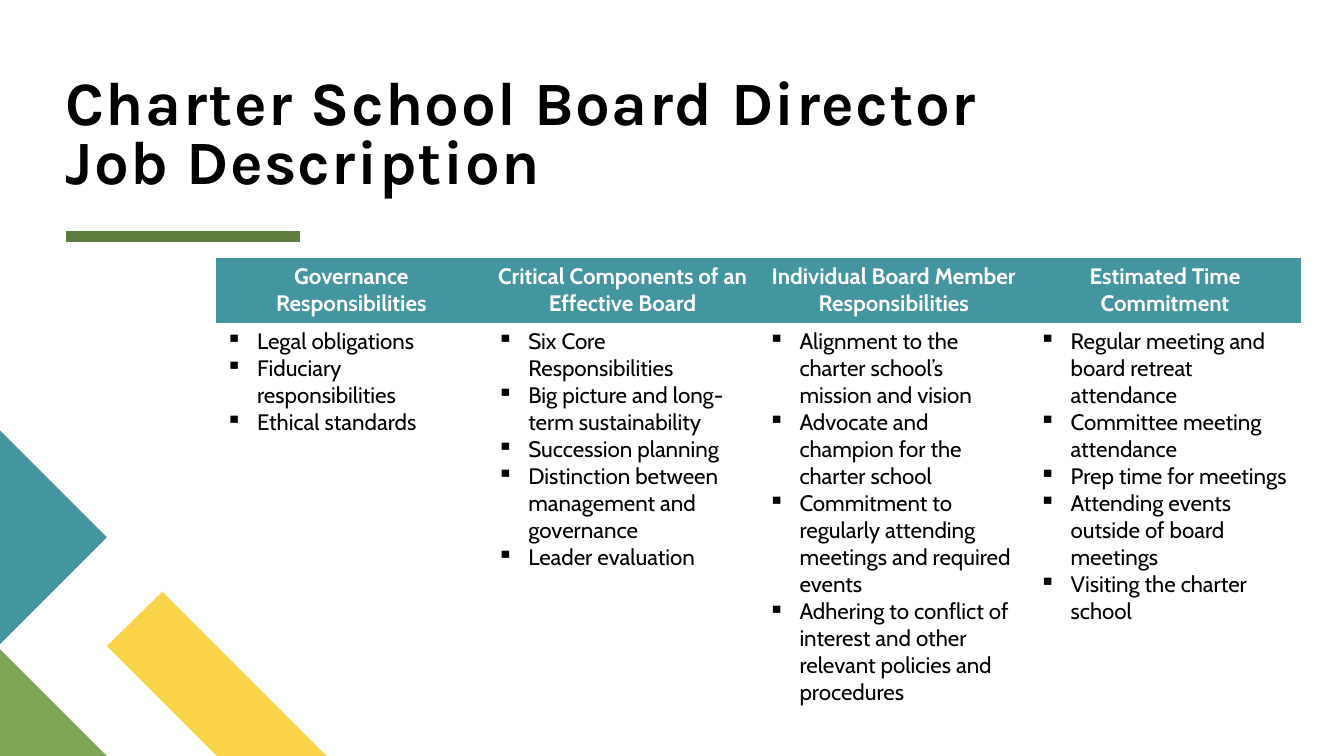
from lxml.etree import SubElement
from pptx import Presentation
from pptx.dml.color import RGBColor
from pptx.enum.text import MSO_ANCHOR, MSO_AUTO_SIZE, PP_ALIGN
from pptx.oxml.ns import qn
from pptx.util import Pt

PX = 9144
COLORS = {
    "black": "000000",
    "white": "FFFFFF",
    "teal": "4495A2",
    "gold": "F9D448",
    "green": "7CA655",
    "olive": "5D7D40",
}
CORNER = [
    ("gold", [(324, 750), (215, 750), (106, 641), (161, 587)]),
    ("green", [(106, 750), (0, 750), (0, 644)]),
    ("teal", [(0, 427), (106, 533), (0, 639)]),
]
DUTIES = {
    "Governance Responsibilities": [
        "Legal obligations",
        "Fiduciary responsibilities",
        "Ethical standards",
    ],
    "Critical Components of an Effective Board": [
        "Six Core Responsibilities",
        "Big picture and long-term sustainability",
        "Succession planning",
        "Distinction between management and governance",
        "Leader evaluation",
    ],
    "Individual Board Member Responsibilities": [
        "Alignment to the charter school’s mission and vision",
        "Advocate and champion for the charter school",
        "Commitment to regularly attending meetings and required events",
        "Adhering to conflict of interest and other relevant policies and procedures",
    ],
    "Estimated Time Commitment": [
        "Regular meeting and board retreat attendance",
        "Committee meeting attendance",
        "Prep time for meetings",
        "Attending events outside of board meetings",
        "Visiting the charter school",
    ],
}
PLAIN = "{2D5ABB26-0587-4C30-8999-92F81FD0307C}"


def color(name):
    return RGBColor.from_string(COLORS[name])


def assign(item, values):
    for name, value in values.items():
        setattr(item, name, value)


def style(font, face, size, bold, tint):
    assign(font, {"name": face, "size": Pt(size), "bold": bold})
    font.color.rgb = color(tint)


def add_title(slide, text):
    title = slide.shapes.title
    assign(title, {"left": 65 * PX, "top": 11 * PX, "width": 1189 * PX, "height": 184 * PX})
    frame = title.text_frame
    frame.text = text
    assign(frame, {
        "margin_left": 0, "margin_top": 0, "margin_right": 0, "margin_bottom": 0,
        "word_wrap": True, "auto_size": MSO_AUTO_SIZE.NONE,
        "vertical_anchor": MSO_ANCHOR.BOTTOM,
    })
    para = frame.paragraphs[0]
    assign(para, {"alignment": PP_ALIGN.LEFT, "line_spacing": 0.8})
    for run in para.runs:
        style(run.font, "Karla", 44, True, "black")
        run.font._element.set("spc", "100")


def add_rule(slide, left, right, top):
    rule = slide.shapes.add_connector(1, left * PX, top * PX, right * PX, top * PX)
    rule.line.color.rgb = color("olive")
    rule.line.width = Pt(8)
    SubElement(rule._element.spPr, qn("a:effectLst"))


def add_patch(slide, tint, points):
    pen = slide.shapes.build_freeform(*points[0], scale=PX)
    pen.add_line_segments(points[1:], close=True)
    patch = pen.convert_to_shape()
    patch.shadow.inherit = False
    patch.fill.solid()
    patch.fill.fore_color.rgb = color(tint)
    patch.line.fill.background()


def add_bullet(para):
    props = para._p.get_or_add_pPr()
    props.set("marL", str(31 * PX))
    props.set("indent", str(-31 * PX))
    SubElement(props, qn("a:buChar"), char="▪")


def fill_cell(cell, lines, head):
    if head:
        cell.fill.solid()
        cell.fill.fore_color.rgb = color("teal")
    else:
        cell.fill.background()
    cell.text = "\n".join(lines)
    for para in cell.text_frame.paragraphs:
        style(para.runs[0].font, "Cabin", 16, head, "white" if head else "black")
        if head:
            para.alignment = PP_ALIGN.CENTER
        else:
            add_bullet(para)


def add_duties(slide):
    count = len(DUTIES)
    frame = slide.shapes.add_table(2, count, 214 * PX, 256 * PX, 269 * count * PX, 447 * PX)
    table = frame.table
    assign(table, {"first_row": False, "horz_banding": False})
    table._tbl.tblPr.find(qn("a:tableStyleId")).text = PLAIN
    for row, height in zip(table.rows, (64, 383)):
        row.height = height * PX
    for col, (head, items) in enumerate(DUTIES.items()):
        table.columns[col].width = 269 * PX
        fill_cell(table.cell(0, col), [head], True)
        fill_cell(table.cell(1, col), items, False)


def main():
    deck = Presentation()
    assign(deck, {"slide_width": 1333 * PX, "slide_height": 750 * PX})
    slide = deck.slides.add_slide(deck.slide_layouts[5])
    add_rule(slide, 65, 298, 235)
    for tint, points in CORNER:
        add_patch(slide, tint, points)
    add_title(slide, "Charter School Board Director \vJob Description")
    add_duties(slide)
    deck.save("out.pptx")


if __name__ == "__main__":
    main()
